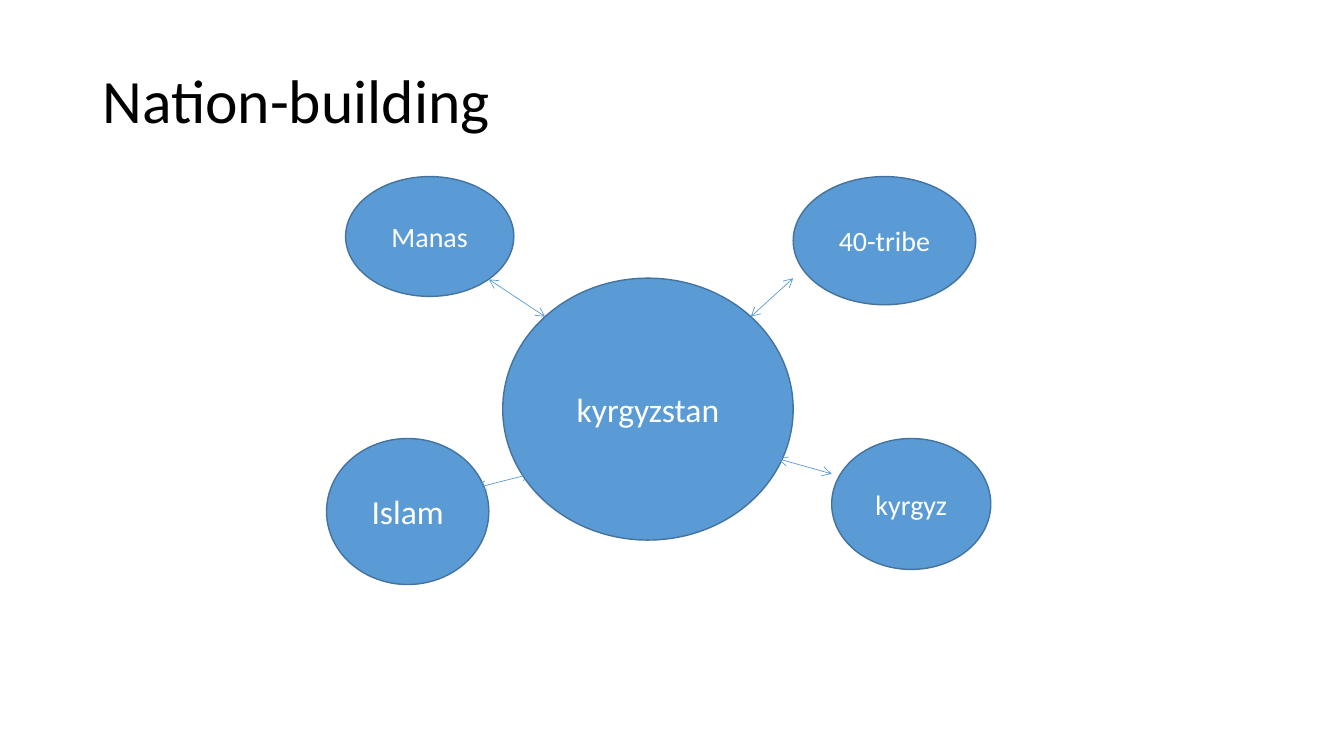
from lxml import etree
from pptx import Presentation
from pptx import util as u
from pptx.dml.color import RGBColor
from pptx.enum import shapes, text
from pptx.oxml import ns

BLACK = RGBColor(0x00, 0x00, 0x00)
WHITE = RGBColor(0xFF, 0xFF, 0xFF)
BLUE = RGBColor(0x5B, 0x9B, 0xD5)
DARK_BLUE = RGBColor(0x43, 0x73, 0x9E)

# Label, left, top, width, height (cm), text size
BUBBLES = [
    ("kyrgyzstan", 12.67, 7.01, 7.32, 6.6, 24),
    ("Islam", 8.23, 11.05, 4.09, 3.68, 24),
    ("kyrgyz", 20.96, 11.05, 4.01, 3.3, 20),
    ("40-tribe", 19.99, 4.45, 4.6, 3.23, 20),
    ("Manas", 8.71, 4.45, 4.24, 3.02, 20),
]
# Start x, start y, end x, end y (cm)
ARROWS = [
    (12.32, 7.04, 13.74, 7.98),
    (12.01, 12.29, 13.39, 11.94),
    (19.61, 11.56, 20.96, 11.94),
    (18.92, 7.98, 19.99, 7.01),
]


def write_text(shape, content, *, size, color, align, line_spacing=1.0):
    frame = shape.text_frame
    frame.word_wrap = True
    frame.vertical_anchor = text.MSO_ANCHOR.MIDDLE
    paragraph = frame.paragraphs[0]
    paragraph.text = content
    paragraph.alignment = align
    paragraph.line_spacing = line_spacing
    font = paragraph.runs[0].font
    font.name = "Calibri"
    font.size = u.Pt(size)
    font.color.rgb = color


def add_title(slide, content):
    box = slide.shapes.add_textbox(u.Cm(2.33), u.Cm(1.01), u.Cm(29.21), u.Cm(3.22))
    write_text(box, content, size=44, color=BLACK,
               align=text.PP_ALIGN.LEFT, line_spacing=0.9)


def add_bubble(slide, label, left, top, width, height, size):
    bubble = slide.shapes.add_shape(
        shapes.MSO_SHAPE.OVAL, u.Cm(left), u.Cm(top), u.Cm(width), u.Cm(height))
    bubble.shadow.inherit = False
    bubble.fill.solid()
    bubble.fill.fore_color.rgb = BLUE
    bubble.line.color.rgb = DARK_BLUE
    bubble.line.width = u.Pt(1)
    write_text(bubble, label, size=size, color=WHITE, align=text.PP_ALIGN.CENTER)


def add_double_arrow(slide, *ends):
    arrow = slide.shapes.add_connector(
        shapes.MSO_CONNECTOR.STRAIGHT, *(u.Cm(end) for end in ends))
    arrow.line.color.rgb = BLUE
    arrow.line.width = u.Pt(0.5)
    line = arrow.line._get_or_add_ln()
    for tag in ("a:headEnd", "a:tailEnd"):
        etree.SubElement(line, ns.qn(tag), type="arrow")
    etree.SubElement(arrow._element.spPr, ns.qn("a:effectLst"))


def main():
    presentation = Presentation()
    presentation.slide_width = u.Cm(33.87)
    presentation.slide_height = u.Cm(19.05)
    slide = presentation.slides.add_slide(presentation.slide_layouts[6])
    add_title(slide, "Nation-building")
    for bubble in BUBBLES:
        add_bubble(slide, *bubble)
    for arrow in ARROWS:
        add_double_arrow(slide, *arrow)
    presentation.save("out.pptx")


if __name__ == "__main__":
    main()
